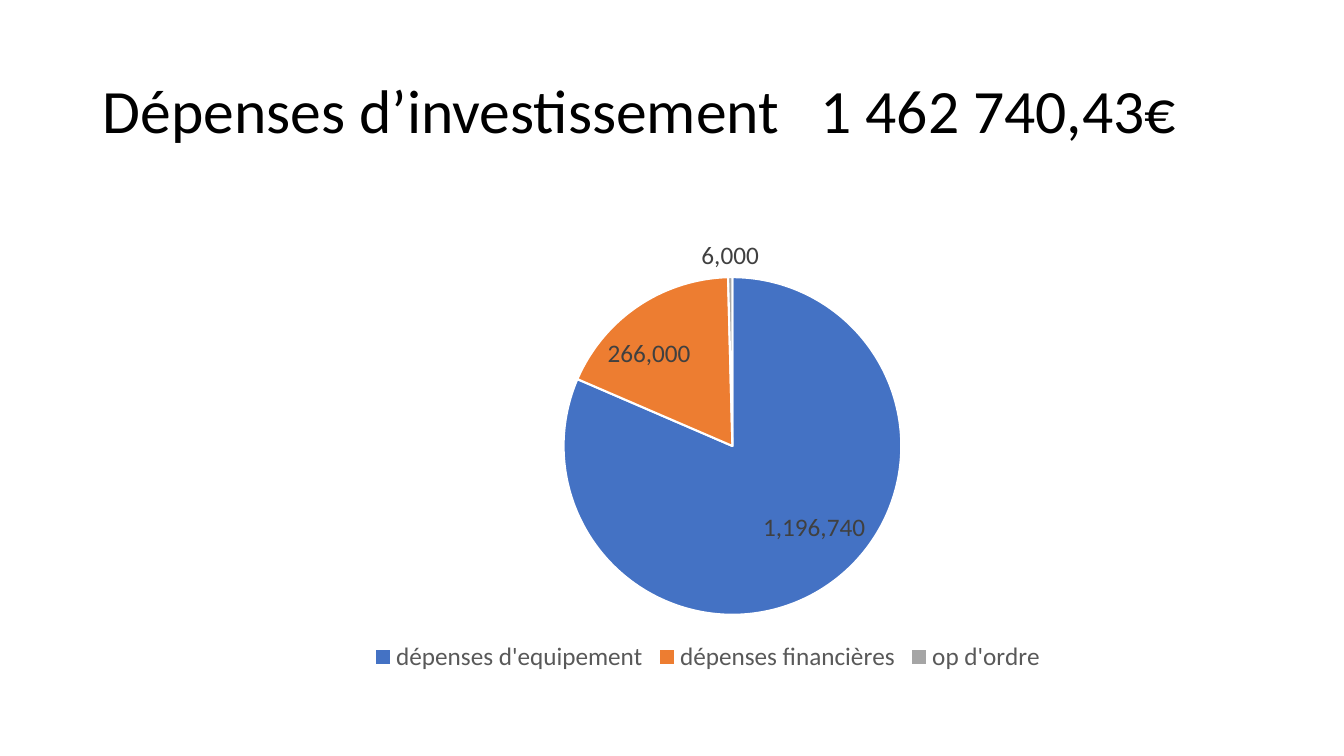
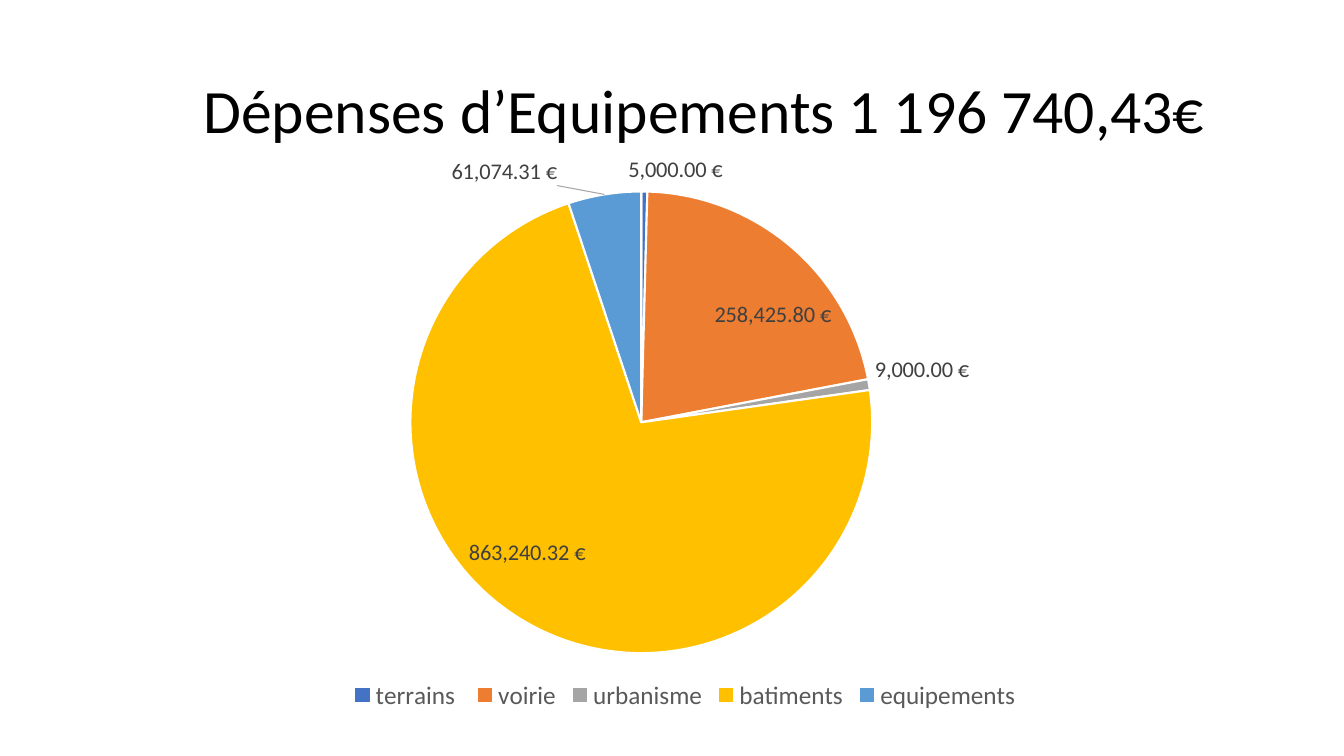
from lxml.etree import SubElement
from pptx import Presentation
from pptx.chart.data import CategoryChartData
from pptx.dml.color import RGBColor
from pptx.enum.chart import XL_CHART_TYPE as ChartType
from pptx.enum.chart import XL_LABEL_POSITION as LabelPos
from pptx.enum.chart import XL_LEGEND_POSITION as LegendPos
from pptx.enum.text import MSO_ANCHOR as Anchor
from pptx.oxml import parse_xml
from pptx.oxml.ns import nsdecls, qn
from pptx.util import Inches, Pt

WIDTH, HEIGHT = 13.33, 7.5
FONT = "Calibri"
TITLE_BOX = (0.92, 0.4, 11.5, 1.45)
SLICE_COLOURS = ["4472C4", "ED7D31", "A5A5A5", "FFC000", "5B9BD5"]


def colour(hex_code):
    """Turn a hex string into a colour."""
    return RGBColor.from_string(hex_code)


def style(font, size, hex_code):
    """Apply the shared typeface with a size and colour."""
    font.name, font.size = FONT, Pt(size)
    font.color.rgb = colour(hex_code)


def add_text(slide, text, box, size=44, hex_code="000000", indent=0, tab=None):
    """Add a one-paragraph text box, optionally indented or with a tab stop."""
    frame = slide.shapes.add_textbox(*map(Inches, box)).text_frame
    frame.word_wrap = True
    frame.vertical_anchor = Anchor.MIDDLE
    line = frame.paragraphs[0]
    line.line_spacing = 0.9
    run = line.add_run()
    run.text = text
    style(run.font, size, hex_code)
    props = line._p.get_or_add_pPr()
    props.set("marL", str(Inches(indent)))
    if tab:
        stops = SubElement(props, qn("a:tabLst"))
        SubElement(stops, qn("a:tab"), pos=str(Inches(tab)), algn="l")


def manual_layout(**places):
    """Build a chart layout from shares of the chart's size."""
    entries = "".join(f'<c:{key} val="{value}"/>' for key, value in places.items())
    return parse_xml(f'<c:layout {nsdecls("c")}><c:manualLayout>{entries}'
                     "</c:manualLayout></c:layout>")


def place_pie(chart, box, left, top, diameter):
    """Fix the pie's square inside the chart, in inches from the chart's corner."""
    area = chart._chartSpace.chart.plotArea
    for old in area.findall(qn("c:layout")):
        area.remove(old)
    area.insert(0, manual_layout(
        layoutTarget="inner", xMode="edge", yMode="edge",
        x=round(left / box[2], 4), y=round(top / box[3], 4),
        w=round(diameter / box[2], 4), h=round(diameter / box[3], 4)))


def move_label(point, box, right, down, size):
    """Shift one outside label by inches from its usual place."""
    label = point.data_label
    style(label.font, size, "404040")
    label.position = LabelPos.OUTSIDE_END
    label._dLbl.insert(1, manual_layout(x=round(right / box[2], 4),
                                        y=round(down / box[3], 4)))


def add_leader_lines(labels, hex_code="A6A6A6"):
    """Join moved labels to their slices with thin lines."""
    group = labels._element
    if group.find(qn("c:showLeaderLines")) is None:
        SubElement(group, qn("c:showLeaderLines"), val="1")
    group.find(qn("c:showLeaderLines")).set("val", "1")
    group.append(parse_xml(
        f'<c:leaderLines {nsdecls("c", "a")}><c:spPr><a:ln w="{Pt(0.75)}"><a:solidFill>'
        f'<a:srgbClr val="{hex_code}"/></a:solidFill></a:ln></c:spPr></c:leaderLines>'))


def add_pie(slide, box, values, pie, label_size, number_format, shifts=None):
    """Add a pie chart with value labels and a legend below."""
    data = CategoryChartData(number_format=number_format)
    data.categories = list(values)
    data.add_series("Series 1", list(values.values()))
    chart = slide.shapes.add_chart(ChartType.PIE, *map(Inches, box), data).chart
    style(chart.font, 10, "000000")
    chart.has_title = False
    chart.has_legend = True
    chart.legend.position = LegendPos.BOTTOM
    chart.legend.include_in_layout = False
    style(chart.legend.font, 18, "595959")
    chart.plots[0].vary_by_categories = True
    place_pie(chart, box, *pie)

    series = chart.plots[0].series[0]
    for index, hex_code in zip(range(len(values)), SLICE_COLOURS):
        part = series.points[index].format
        part.fill.solid()
        part.fill.fore_color.rgb = colour(hex_code)
        part.line.color.rgb = colour("FFFFFF")
        part.line.width = Pt(1.5)

    labels = series.data_labels
    labels.show_value = True
    labels.number_format = number_format
    labels.number_format_is_linked = False
    labels.position = LabelPos.BEST_FIT
    style(labels.font, label_size, "404040")
    for index, (right, down) in (shifts or {}).items():
        move_label(series.points[index], box, right, down, label_size)
    add_leader_lines(labels)


def main():
    """Build the two budget slides."""
    deck = Presentation()
    deck.slide_width, deck.slide_height = Inches(WIDTH), Inches(HEIGHT)
    blank = deck.slide_layouts[6]

    investment = deck.slides.add_slide(blank)
    add_text(investment, "Dépenses d’investissement\t1 462 740,43€", TITLE_BOX, tab=7.12)
    add_pie(investment, (1.39, 2.25, 11.26, 4.47),
            {"dépenses d'equipement": 1196740, "dépenses financières": 266000,
             "op d'ordre": 6000},
            pie=(4.2, 0.5, 3.35), label_size=18, number_format="#,##0")

    equipment = deck.slides.add_slide(blank)
    add_text(equipment, "Dépenses d’Equipements 1 196 740,43€", TITLE_BOX, indent=1)
    add_pie(equipment, (0.77, 1.43, 12.05, 5.67),
            {"terrains ": 5000, "voirie": 258425.8, "urbanisme": 9000,
             "batiments": 863240.32, "equipements": 61074.31},
            pie=(3.3, 0.47, 4.58), label_size=16, number_format='#,##0.00\\ "€"',
            shifts={0: (0.31, -0.02), 4: (-0.46, -0.03)})

    deck.save("out.pptx")


if __name__ == "__main__":
    main()
